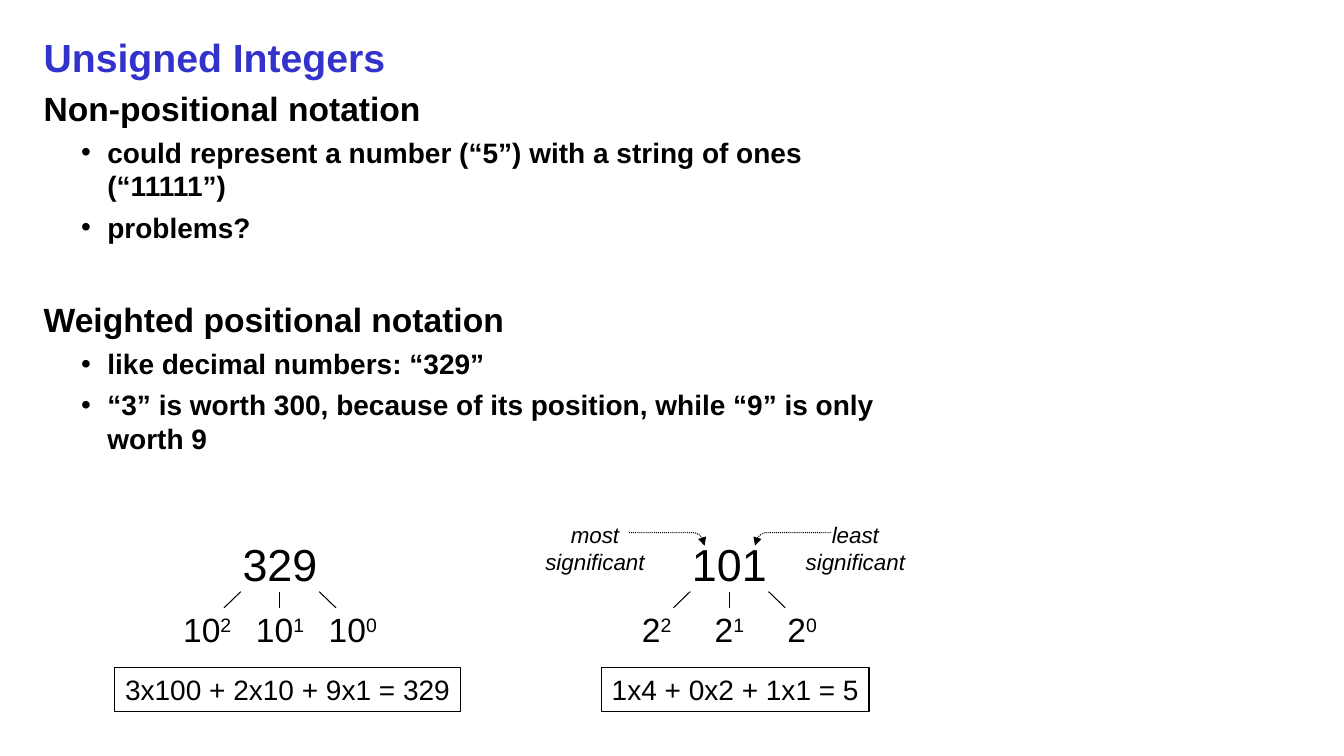
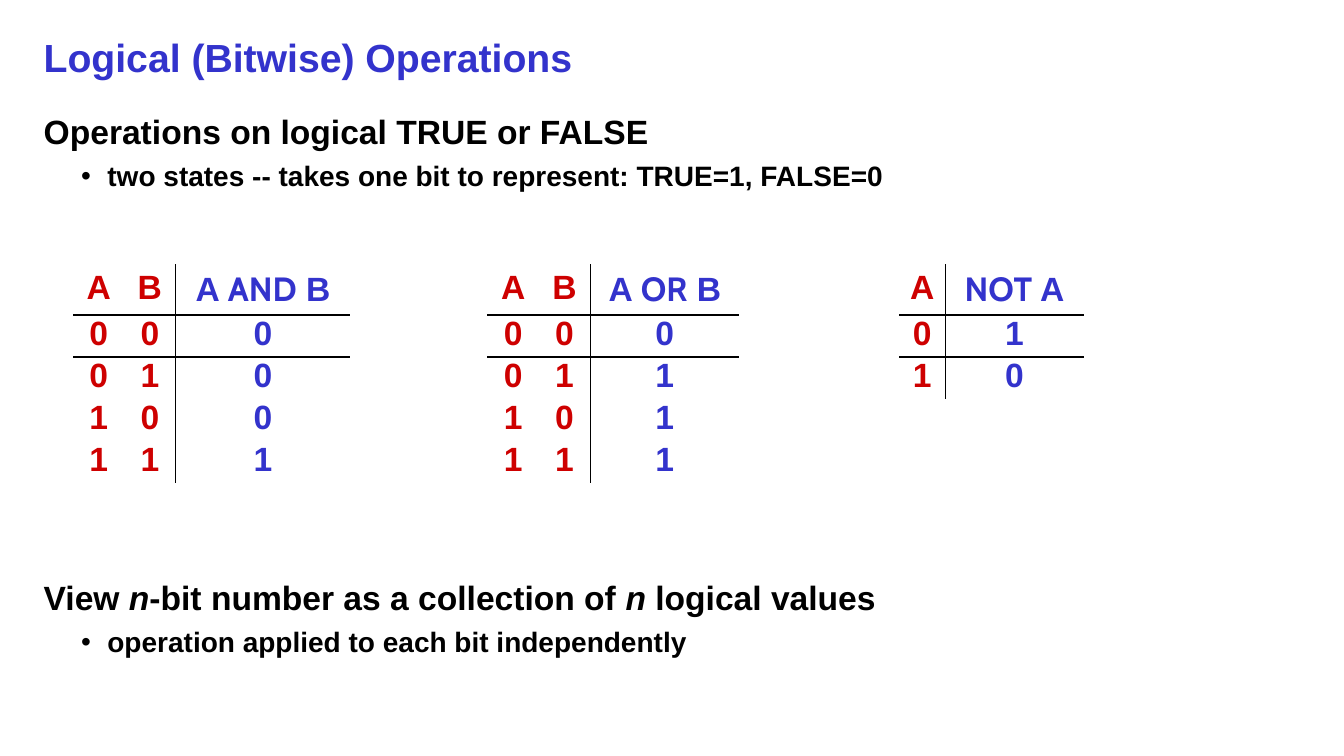
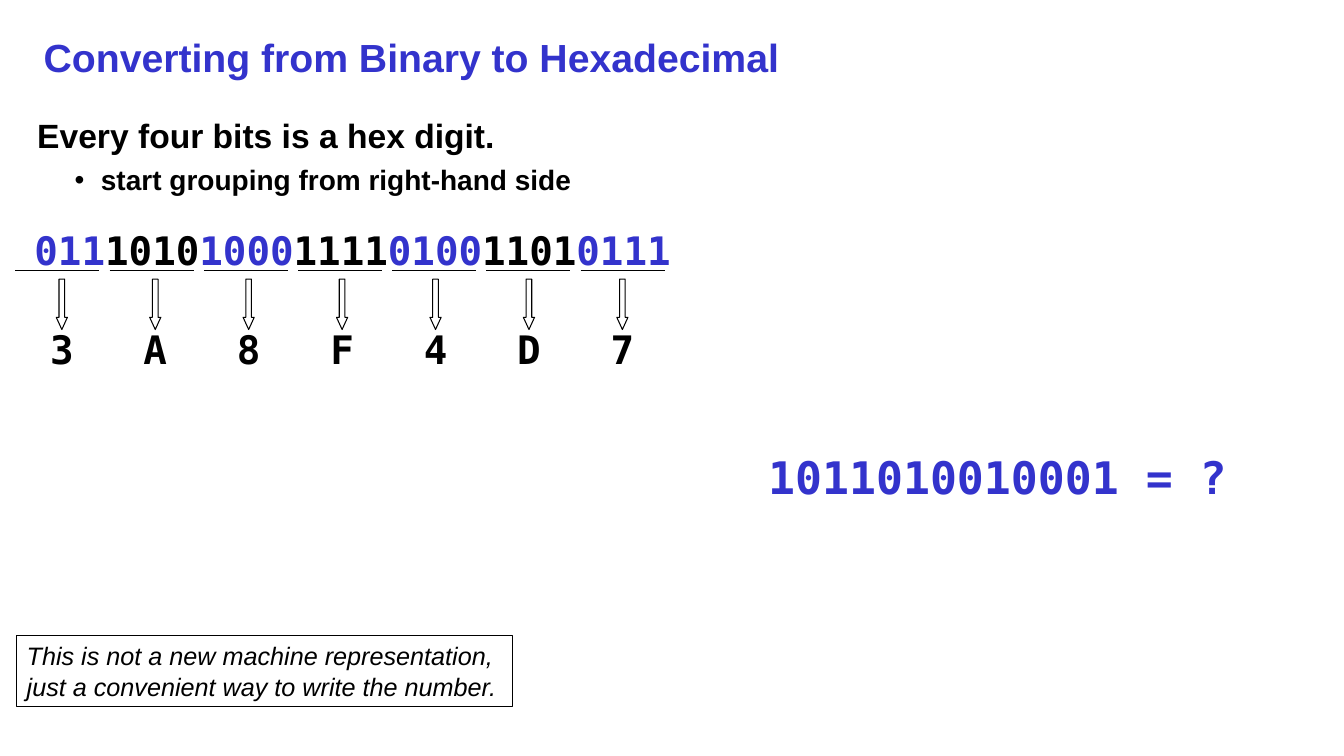
from math import cos, pi, sin

from pptx import Presentation
from pptx.dml.color import RGBColor
from pptx.enum.dml import MSO_LINE
from pptx.enum.shapes import MSO_CONNECTOR as CONN, MSO_SHAPE as SHAPE
from pptx.enum.text import MSO_ANCHOR as ANCHOR, MSO_AUTO_SIZE as AUTO, PP_ALIGN as ALIGN
from pptx.oxml import parse_xml
from pptx.oxml.ns import nsdecls, qn
from pptx.util import Pt

NO_STYLE = "{2D5ABB26-0587-4C30-8999-92F81FD0307C}"


def rgb(color):
    return RGBColor.from_string(color)


def element(tag, attrs="", inner=""):
    return parse_xml(f"<a:{tag} {nsdecls('a')} {attrs}>{inner}</a:{tag}>")


class Deck:
    BLACK, BLUE, RED = "000000", "3333CC", "CE0000"
    SANS, OPERATOR, MONO = "Arial", "Cabin", "DejaVu Sans Mono"
    LINE = 0.75
    GAP = 5.3

    def __init__(self):
        self.prs = Presentation()
        self.prs.slide_width, self.prs.slide_height = Pt(960), Pt(540)
        self.s = None

    def slide(self, title):
        self.s = self.prs.slides.add_slide(self.prs.slide_layouts[1])
        sp = self.place(self.s.shapes.title, 24, 19.4, 912, 42)
        sp.text_frame.vertical_anchor = ANCHOR.MIDDLE
        self.set_text(sp.text_frame, [title], 28, color=self.BLUE, bold=True)

    def place(self, sp, x, y, w, h):
        sp.left, sp.top, sp.width, sp.height = Pt(x), Pt(y), Pt(w), Pt(h)
        return sp

    def font(self, r, size, color=BLACK, name=SANS, bold=False, italic=False, raised=False):
        f = r.font
        f.size, f.name, f.bold, f.italic = Pt(size), name, bold, italic
        f.color.rgb = rgb(color)
        if raised:
            r._r.get_or_add_rPr().set("baseline", "30000")

    def fill_paragraph(self, p, content, size, **style):
        if isinstance(content, str):
            p.text = content
            for r in p.runs:
                self.font(r, size, **style)
            return
        for words, changes in content:
            r = p.add_run()
            r.text = words
            self.font(r, size, **{**style, **changes})

    def set_text(self, tf, paragraphs, size, align=ALIGN.LEFT, **style):
        tf.auto_size = AUTO.NONE
        tf.word_wrap = True
        for i, content in enumerate(paragraphs):
            p = tf.add_paragraph() if i else tf.paragraphs[0]
            p.alignment = align
            self.fill_paragraph(p, content, size, **style)

    def body(self, x, y, w, h, items):
        tf = self.place(self.s.placeholders[1], x, y, w, h).text_frame
        tf.auto_size = AUTO.NONE
        for i, (level, content, gap) in enumerate(items):
            p = tf.add_paragraph() if i else tf.paragraphs[0]
            p.level = level
            p.space_before = Pt(gap)
            self.fill_paragraph(p, content, 20 if level else 24, bold=True)
            pPr = p._p.get_or_add_pPr()
            pPr.set("marL", str(Pt(45.5 * level)))
            pPr.set("indent", str(Pt(-18.7 * level)))
            if level:
                pPr.append(element("buFont", 'typeface="Arial"'))
                pPr.append(element("buChar", 'char="•"'))
            else:
                pPr.append(element("buNone"))

    def text(self, x, y, w, h, paragraphs, size, align=ALIGN.CENTER, **style):
        sp = self.s.shapes.add_textbox(Pt(x), Pt(y), Pt(w), Pt(h))
        self.set_text(sp.text_frame, paragraphs, size, align, **style)

    def outline(self, sp):
        sp.shadow.inherit = False
        sp.fill.background()
        sp.line.color.rgb = rgb(self.BLACK)
        sp.line.width = Pt(self.LINE)
        return sp

    def shape(self, kind, x, y, w, h):
        return self.outline(self.s.shapes.add_shape(kind, Pt(x), Pt(y), Pt(w), Pt(h)))

    def box(self, x, y, w, h, content, size, align=ALIGN.CENTER, **style):
        tf = self.shape(SHAPE.RECTANGLE, x, y, w, h).text_frame
        self.set_text(tf, [content], size, align, **style)
        tf.word_wrap = align != ALIGN.CENTER

    def down_arrow(self, x, y, w, h):
        sp = self.shape(SHAPE.DOWN_ARROW, x, y, w, h)
        sp.adjustments[0], sp.adjustments[1] = 0.5, 1.09

    def line(self, x1, y1, x2, y2):
        c = self.s.shapes.add_connector(CONN.STRAIGHT, Pt(x1), Pt(y1), Pt(x2), Pt(y2))
        c.line.color.rgb = rgb(self.BLACK)
        c.line.width = Pt(self.LINE)
        c._element.spPr.append(element("effectLst"))

    def pointer(self, x, y, direction):
        run, rx, ry, steps = 45, 9, 9.4, 12
        angles = [pi / 2 * i / steps for i in range(steps + 1)]
        bend = [(x + direction * (run + rx * sin(a)), y + ry * (1 - cos(a))) for a in angles]
        builder = self.s.shapes.build_freeform(Pt(x), Pt(y))
        builder.add_line_segments([(Pt(px), Pt(py)) for px, py in bend], close=False)
        sp = self.outline(builder.convert_to_shape())
        sp.line.dash_style = MSO_LINE.ROUND_DOT
        sp._element.spPr.find(qn("a:ln")).append(element("tailEnd", 'type="triangle"'))

    def border(self, cell, sides):
        tcPr = cell._tc.get_or_add_tcPr()
        color = f'<a:solidFill><a:srgbClr val="{self.BLACK}"/></a:solidFill>'
        for side in "BTRL":
            if side in sides:
                tcPr.insert(0, element(f"ln{side}", f'w="{Pt(1)}"', color))

    def truth_table(self, x, y, widths, header, rows):
        heights = [36.4] + [30] * len(rows)
        frame = self.s.shapes.add_table(len(heights), len(widths), Pt(x), Pt(y),
                                        Pt(sum(widths)), Pt(sum(heights)))
        table = frame.table
        table.first_row = table.horz_banding = False
        table._tbl.tblPr.find(qn("a:tableStyleId")).text = NO_STYLE
        for column, w in zip(table.columns, widths):
            column.width = Pt(w)
        for row, h in zip(table.rows, heights):
            row.height = Pt(h)
        last = len(widths) - 1
        for i, values in enumerate([header, *rows]):
            for j, value in enumerate(values):
                cell = table.cell(i, j)
                cell.fill.background()
                color = self.BLUE if j == last else self.RED
                self.set_text(cell.text_frame, [value], 24, ALIGN.CENTER, color=color, bold=True)
                if i:
                    cell.text_frame.paragraphs[0].line_spacing = 0.85
                sides = {0: "B", 1: "T"}.get(i, "") + {last - 1: "R", last: "L"}.get(j, "")
                self.border(cell, sides)

    def place_values(self, cx, number, base):
        self.text(cx - 50, 380, 100, 45, [number], 32)
        for k, power in zip((-1, 0, 1), "210"):
            self.text(cx + 52 * k - 30, 431.3, 60, 36,
                      [[(base, {}), (power, {"raised": True})]], 24)
            self.line(cx + 40 * k, 434.2, cx + 28 * k, 422.6)


def unsigned_integers(d):
    d.slide("Unsigned Integers")
    d.body(24, 59, 642, 270, [
        (0, "Non-positional notation", d.GAP),
        (1, "could represent a number (“5”) with a string of ones (“11111”)", d.GAP),
        (1, "problems?", d.GAP),
        (0, "Weighted positional notation", 39.5),
        (1, "like decimal numbers: “329”", d.GAP),
        (1, "“3” is worth 300, because of its position, while “9” is only worth 9", d.GAP),
    ])
    d.place_values(200, "329", "10")
    d.place_values(521, "101", "2")
    d.box(82, 476.6, 247, 31.7, "3x100 + 2x10 + 9x1 = 329", 20)
    d.box(429.8, 476.6, 191, 31.7, "1x4 + 0x2 + 1x1 = 5", 20)
    for x, rank in ((380, "most"), (566, "least")):
        d.text(x, 368.6, 90, 46, [rank, "significant"], 16, italic=True)
    d.pointer(449.3, 380.4, 1)
    d.pointer(593.3, 380.4, -1)


def logical_operations(d):
    d.slide("Logical (Bitwise) Operations")
    italic = {"italic": True}
    d.body(24, 75.6, 684, 419, [
        (0, "Operations on logical TRUE or FALSE", d.GAP),
        (1, "two states -- takes one bit to represent: TRUE=1, FALSE=0", d.GAP),
        (0, [("View ", {}), ("n", italic), ("-bit number as a collection of ", {}),
             ("n", italic), (" logical values", {})], 275),
        (1, "operation applied to each bit independently", d.GAP),
    ])
    operator = {"name": d.OPERATOR}
    pairs = ["00", "01", "10", "11"]
    for x, widths, name, results in ((52.4, (36.3, 36.7, 125), "AND", "0001"),
                                     (348.2, (36.7, 36.7, 106.6), "OR", "0111")):
        header = ["A", "B", [("A ", {}), (name, operator), (" B", {})]]
        d.truth_table(x, 188.6, widths, header, [a + b for a, b in zip(pairs, results)])
    d.truth_table(642.2, 188.6, (33, 99), ["A", [("NOT", operator), (" A", {})]], ["01", "10"])


def binary_to_hexadecimal(d):
    d.slide("Converting from Binary to Hexadecimal")
    d.body(19.4, 78.5, 684, 81, [
        (0, "Every four bits is a hex digit.", d.GAP),
        (1, "start grouping from right-hand side", d.GAP),
    ])
    mono = {"name": d.MONO, "bold": True}
    groups = ["011", "1010", "1000", "1111", "0100", "1101", "0111"]
    colors = [d.BLACK if i % 2 else d.BLUE for i in range(len(groups))]
    bits = [(g, {"color": c}) for g, c in zip(groups, colors)]
    d.text(5.8, 158.4, 492, 41, [bits], 28, **mono)
    for i, group in enumerate(groups):
        x = 11 + 67.3 * i
        d.line(x, 193, x + 60, 193)
        cx = 44.2 + 66.73 * i
        d.text(cx - 39, 229, 78, 41, [f"{int(group, 2):X}"], 28, **mono)
        d.down_arrow(cx - 4, 199.4, 8, 36)
    d.box(12, 453.6, 354.2, 51.4,
          "This is not a new machine representation,\vjust a convenient way to write the number.",
          18, ALIGN.LEFT, italic=True)
    d.text(391.7, 317.5, 492, 46, ["1011010010001 = ?"], 32, ALIGN.RIGHT, color=d.BLUE, **mono)


def main():
    d = Deck()
    unsigned_integers(d)
    logical_operations(d)
    binary_to_hexadecimal(d)
    d.prs.save("out.pptx")


if __name__ == "__main__":
    main()
